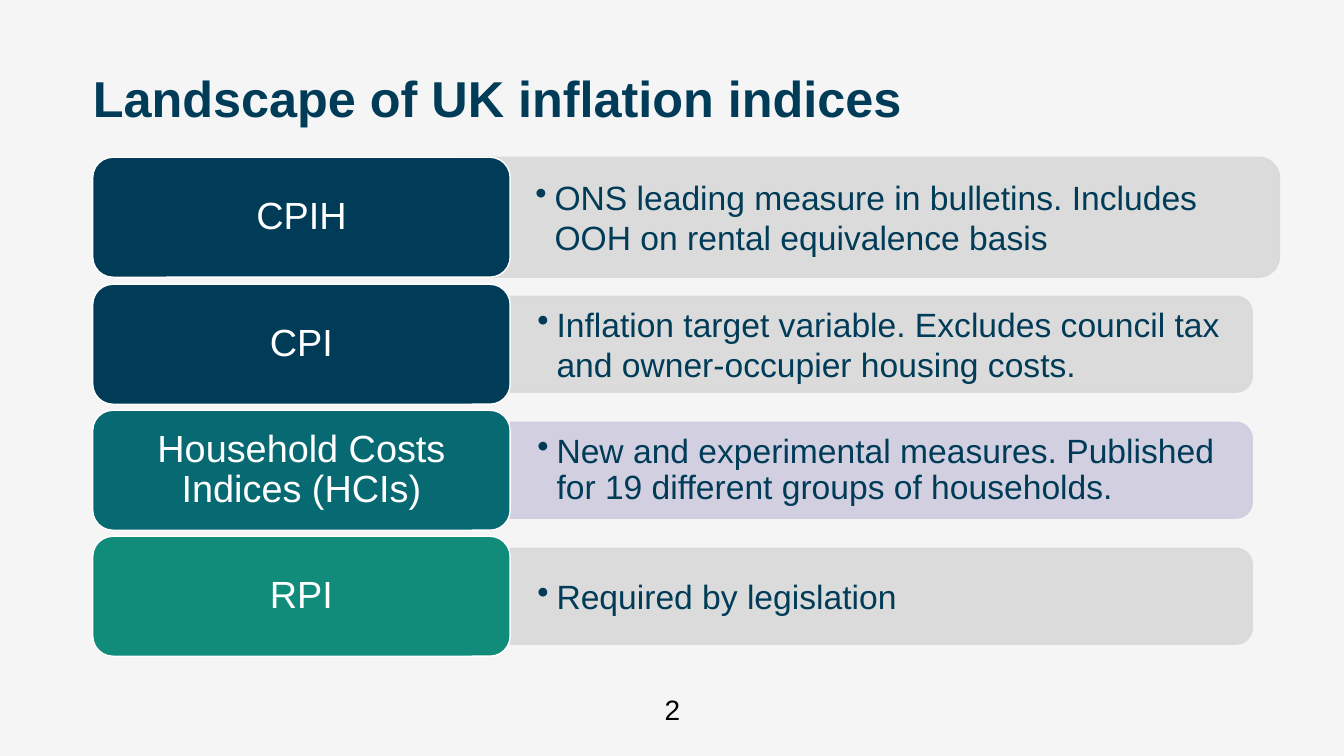
import math
from dataclasses import dataclass

import pptx
import pptx.dml.color
import pptx.enum.shapes
import pptx.enum.text
import pptx.oxml
import pptx.oxml.ns
import pptx.util

PX = 9144  # EMU in one px, 100 px to the inch
NAVY = "003C57"
BODY = "003B57"
GREY = "D9D9D9"
WHITE = "FFFFFF"

LEFT, TOP, PITCH = 92, 156, 125.5
LABEL_WIDTH, LABEL_HEIGHT, LABEL_RADIUS = 414, 119, 20
ANCHOR = pptx.enum.text.MSO_ANCHOR
ALIGN = pptx.enum.text.PP_ALIGN


@dataclass
class Panel:
    left: int = 506
    width: int = 736
    height: int = 95
    radius: int = 16
    margins: tuple[int, int, int, int] = (27, 18, 32, 18)
    level: int = 1
    indent: int = 19


@dataclass
class Index:
    name: str
    note: str
    label_color: str
    panel: Panel
    panel_color: str = GREY
    note_spacing: float = 1.0
    note_after: float = 6


WIDE_PANEL = Panel(454, 815, 119, 21, (27, 19, 33, 19), 2, 69)
INDICES = [
    Index("CPIH", "ONS leading measure in bulletins. Includes OOH on rental "
          "equivalence basis", NAVY, WIDE_PANEL),
    Index("CPI", "Inflation target variable. Excludes council tax and "
          "owner-occupier housing costs.", NAVY, Panel()),
    Index("Household Costs Indices (HCIs)", "New and experimental measures. "
          "Published for 19 different groups of households.", "076A73",
          Panel(), "CFCDDE", 0.9, 3.6),
    Index("RPI", "Required by legislation", "118C7B", Panel()),
]


def px(length: float) -> pptx.util.Emu:
    return pptx.util.Emu(round(length * PX))


def rgb(color: str) -> pptx.dml.color.RGBColor:
    return pptx.dml.color.RGBColor.from_string(color)


def set_font(paragraph, size: float, color: str, bold: bool = False) -> None:
    font = paragraph.font
    font.name, font.size, font.bold = "Arial", pptx.util.Pt(size), bold
    font.color.rgb = rgb(color)


def set_frame(frame, margins: tuple[int, int, int, int], anchor) -> None:
    frame.word_wrap = True
    frame.vertical_anchor = anchor
    (frame.margin_left, frame.margin_top,
     frame.margin_right, frame.margin_bottom) = map(px, margins)


def paint(shape, fill: str, line: str) -> None:
    shape.shadow.inherit = False
    shape.fill.solid()
    shape.fill.fore_color.rgb = rgb(fill)
    shape.line.color.rgb = rgb(line)
    shape.line.width = pptx.util.Pt(1)


def set_opacity(shape, percent: int) -> None:
    for color in shape._element.spPr.iter(pptx.oxml.ns.qn("a:srgbClr")):
        alpha = color.makeelement(pptx.oxml.ns.qn("a:alpha"), {"val": str(percent * 1000)})
        color.append(alpha)


def add_bullet(paragraph, indent: int) -> None:
    properties = paragraph._p.get_or_add_pPr()
    properties.set("marL", str(px(indent)))
    properties.set("indent", str(px(-19)))
    bullet = properties.makeelement(pptx.oxml.ns.qn("a:buChar"), {"char": "•"})
    properties.append(bullet)


def add_panel(slide, index: Index, top: int) -> None:
    panel = index.panel
    right, bottom = panel.left + panel.width, top + panel.height
    radius = panel.radius
    # Rounded right-hand corners, traced from the top one down
    outline = []
    for center_y, start in ((top + radius, -90), (bottom - radius, 0)):
        for degrees in range(start, start + 91, 6):
            angle = math.radians(degrees)
            outline.append((right - radius + radius * math.cos(angle),
                            center_y + radius * math.sin(angle)))
    builder = slide.shapes.build_freeform(px(panel.left), px(top))
    builder.add_line_segments([(px(x), px(y)) for x, y in outline]
                              + [(px(panel.left), px(bottom))], close=True)
    shape = builder.convert_to_shape()
    paint(shape, index.panel_color, index.panel_color)
    set_opacity(shape, 90)

    set_frame(shape.text_frame, panel.margins, ANCHOR.MIDDLE)
    paragraph = shape.text_frame.paragraphs[0]
    paragraph.text = index.note
    paragraph.level = panel.level
    paragraph.alignment = ALIGN.LEFT
    paragraph.line_spacing = index.note_spacing
    paragraph.space_after = pptx.util.Pt(index.note_after)
    add_bullet(paragraph, panel.indent)
    set_font(paragraph, 24, BODY)


def add_label(slide, index: Index, top: int) -> None:
    shape = slide.shapes.add_shape(
        pptx.enum.shapes.MSO_SHAPE.ROUNDED_RECTANGLE,
        px(LEFT), px(top), px(LABEL_WIDTH), px(LABEL_HEIGHT))
    shape.adjustments[0] = LABEL_RADIUS / LABEL_HEIGHT
    paint(shape, index.label_color, WHITE)
    set_frame(shape.text_frame, (17, 11, 17, 11), ANCHOR.MIDDLE)
    paragraph = shape.text_frame.paragraphs[0]
    paragraph.text = index.name
    paragraph.alignment = ALIGN.CENTER
    paragraph.line_spacing = 0.9
    paragraph.space_after = pptx.util.Pt(9.45)
    set_font(paragraph, 27, WHITE)


def main() -> None:
    presentation = pptx.Presentation()
    presentation.slide_width, presentation.slide_height = px(1333), px(750)
    slide = presentation.slides.add_slide(presentation.slide_layouts[5])
    slide.background.fill.solid()
    slide.background.fill.fore_color.rgb = rgb("F5F5F6")

    # Title
    title = slide.shapes.title
    title.left, title.top, title.width, title.height = map(px, (92, 70, 1150, 58))
    set_frame(title.text_frame, (0, 0, 0, 0), ANCHOR.BOTTOM)
    paragraph = title.text_frame.paragraphs[0]
    paragraph.text = "Landscape of UK inflation indices"
    paragraph.alignment = ALIGN.LEFT
    paragraph.line_spacing = 0.95
    paragraph.space_after = pptx.util.Pt(10)
    set_font(paragraph, 36, NAVY, bold=True)

    # One row per index: the note panel, then its label on top
    for row, index in enumerate(INDICES):
        top = round(TOP + row * PITCH)
        panel_top = top + (LABEL_HEIGHT - index.panel.height) // 2
        add_panel(slide, index, panel_top)
        add_label(slide, index, top)

    # Page number
    number = slide.shapes.add_textbox(px(510), px(684), px(314), px(40))
    set_frame(number.text_frame, (10, 5, 10, 5), ANCHOR.MIDDLE)
    paragraph = number.text_frame.paragraphs[0]
    paragraph.text = "2"
    paragraph.alignment = ALIGN.CENTER
    set_font(paragraph, 20, "000000")

    presentation.save("out.pptx")


if __name__ == "__main__":
    main()
